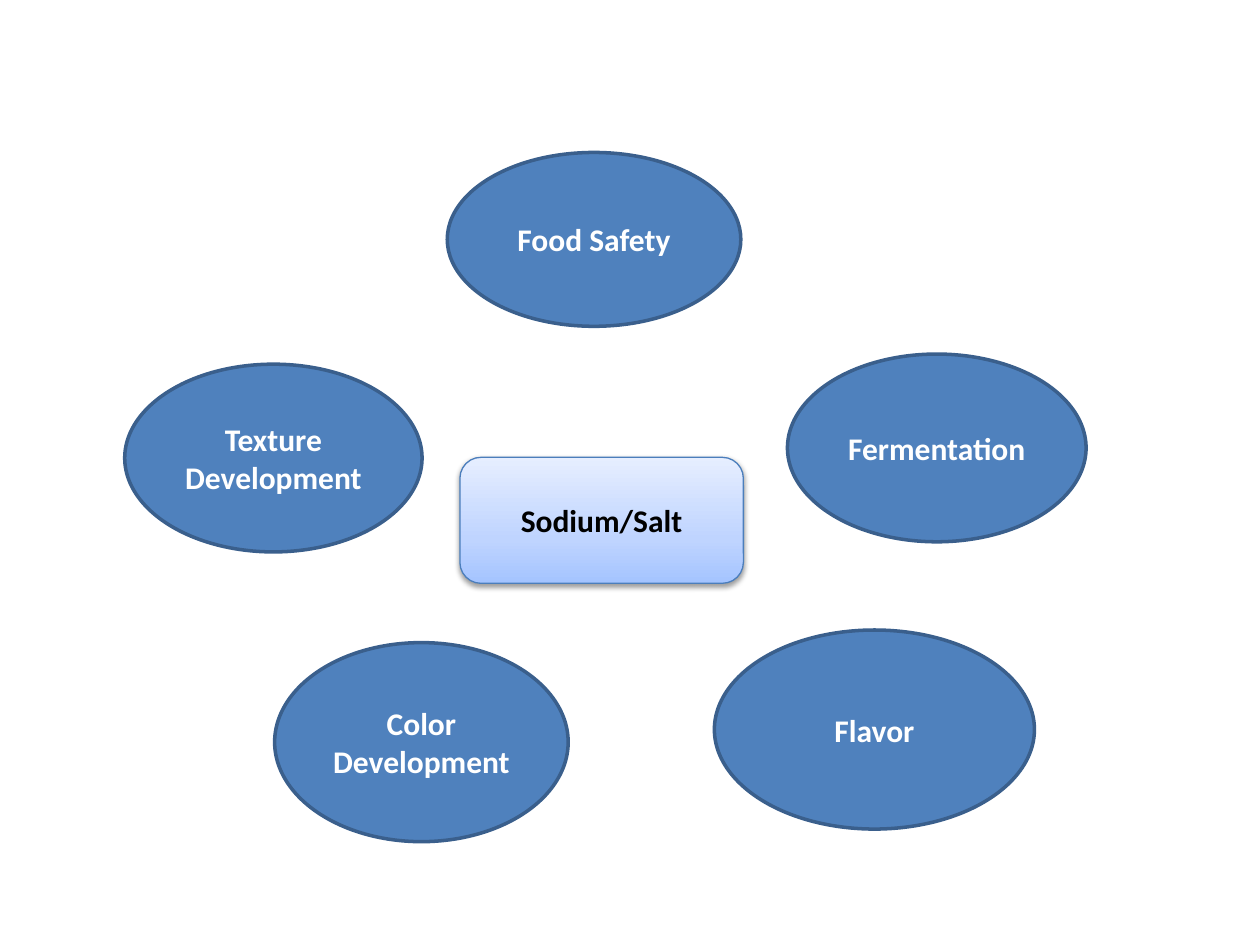
from copy import deepcopy

from lxml import etree
from pptx import Presentation
from pptx import util as u
from pptx.dml.color import RGBColor
from pptx.enum import shapes, text
from pptx.oxml import ns

COLORS = {
    "oval": "4F81BD",
    "oval_edge": "3A5F8C",
    "oval_text": "FFFFFF",
    "hub_edge": "4B7EBC",
    "hub_text": "000000",
    "hub_deep": "A4C4FF",
    "hub_mid": "BFD4FF",
    "hub_pale": "E6EEFF",
    "shadow": "000000",
}

ROLES = [
    ("Texture Development", (0.99, 2.89, 2.36, 1.49)),
    ("Fermentation", (6.25, 2.81, 2.37, 1.49)),
    ("Food Safety", (3.55, 1.21, 2.33, 1.38)),
    ("Color Development", (2.18, 5.1, 2.33, 1.58)),
    ("Flavor", (5.67, 5, 2.54, 1.58)),
]


def rgb(name):
    return RGBColor.from_string(COLORS[name])


def add_label(page, kind, box, label, ink, edge, width):
    shape = page.shapes.add_shape(kind, *(u.Inches(length) for length in box))
    shape.shadow.inherit = False
    shape.line.color.rgb = rgb(edge)
    shape.line.width = u.Pt(width)
    frame = shape.text_frame
    frame.word_wrap = True
    frame.vertical_anchor = text.MSO_ANCHOR.MIDDLE
    para = frame.paragraphs[0]
    para.alignment = text.PP_ALIGN.CENTER
    span = para.add_run()
    span.text = label
    span.font.name = "Calibri"
    span.font.size = u.Pt(18)
    span.font.bold = True
    span.font.color.rgb = rgb(ink)
    return shape


def add_role(page, box, label):
    oval = add_label(page, shapes.MSO_SHAPE.OVAL, box, label,
                     "oval_text", "oval_edge", 2)
    oval.fill.solid()
    oval.fill.fore_color.rgb = rgb("oval")


def fill_with_gradient(shape):
    shape.fill.gradient()
    shape.fill.gradient_angle = 90
    stop_list = shape.element.spPr.find(".//" + ns.qn("a:gsLst"))
    stop_list.insert(1, deepcopy(stop_list[0]))
    stops = [("hub_deep", 0), ("hub_mid", 0.35), ("hub_pale", 1)]
    for stop, (name, position) in zip(shape.fill.gradient_stops, stops):
        stop.color.rgb = rgb(name)
        stop.position = position


def add_shadow(shape):
    effects = shape.element.spPr.find(ns.qn("a:effectLst"))
    shadow = etree.SubElement(effects, ns.qn("a:outerShdw"),
                              blurRad=str(u.Pt(3.1)), dist=str(u.Pt(1.6)),
                              dir="5400000", rotWithShape="0")
    color = etree.SubElement(shadow, ns.qn("a:srgbClr"), val=COLORS["shadow"])
    etree.SubElement(color, ns.qn("a:alpha"), val="38000")


def add_hub(page, box, label):
    hub = add_label(page, shapes.MSO_SHAPE.ROUNDED_RECTANGLE, box, label,
                    "hub_text", "hub_edge", 0.75)
    fill_with_gradient(hub)
    add_shadow(hub)


def main():
    deck = Presentation()
    deck.slide_width, deck.slide_height = u.Inches(10), u.Inches(7.5)
    page = deck.slides.add_slide(deck.slide_layouts[6])
    add_hub(page, (3.65, 3.63, 2.25, 1), "Sodium/Salt")
    for label, box in ROLES:
        add_role(page, box, label)
    deck.save("out.pptx")


if __name__ == "__main__":
    main()
